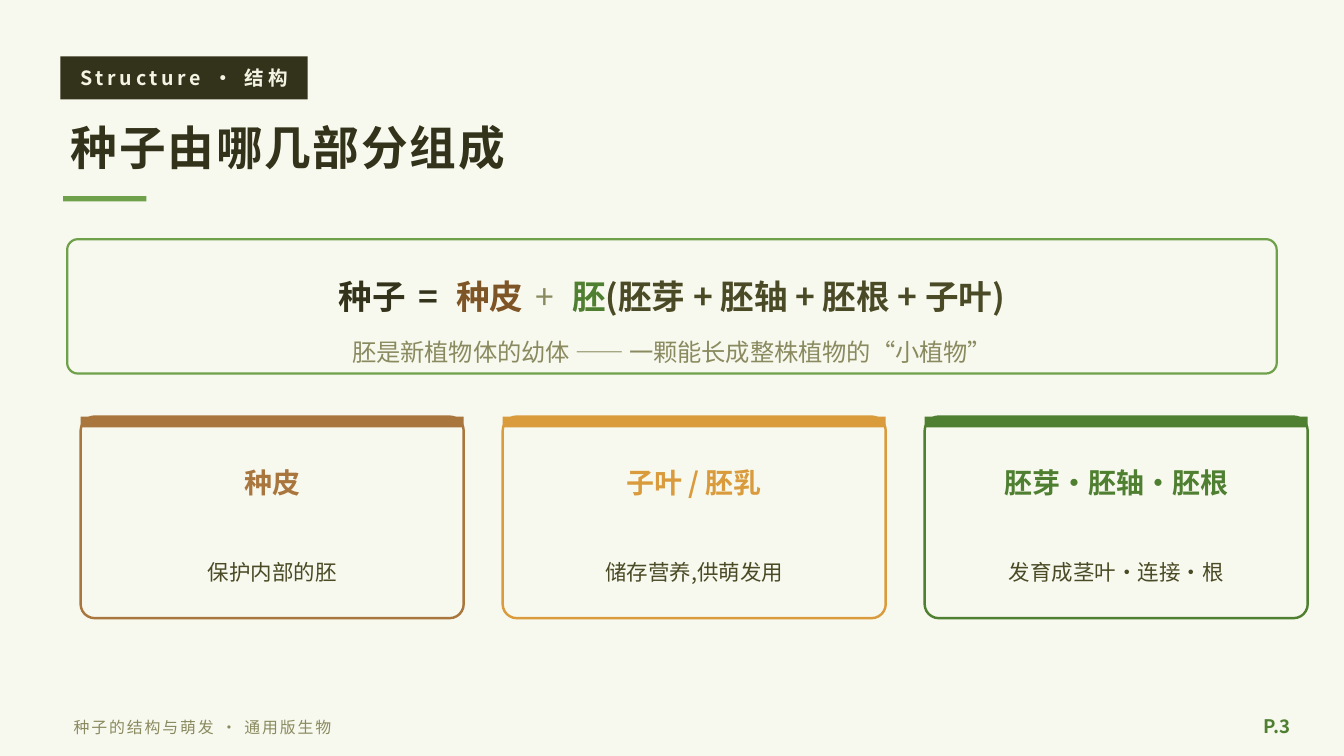
"""Build the slide on the parts that make up a seed."""
from dataclasses import dataclass

from pptx import Presentation
from pptx.dml.color import RGBColor
from pptx.enum.shapes import MSO_SHAPE
from pptx.enum.text import MSO_ANCHOR, PP_ALIGN
from pptx.oxml.ns import qn
from pptx.util import Inches, Pt


@dataclass(frozen=True)
class Theme:
    font: str = "Noto Sans CJK SC"
    paper: str = "F8F9EE"
    cream: str = "F3F4E4"
    ink: str = "33321A"
    body: str = "4A4A26"
    muted: str = "8A8A60"
    leaf: str = "6FA14A"
    forest: str = "4F7F30"
    bark: str = "7E5526"
    coat: str = "A9763E"
    grain: str = "D99B3C"
    title_size: float = 25
    formula_size: float = 18
    heading_size: float = 15
    note_size: float = 13
    card_size: float = 11.5
    tag_size: float = 10.5
    page_size: float = 10
    footer_size: float = 8.5


theme = Theme()
deck = Presentation()
deck.slide_width = Inches(10)
deck.slide_height = Inches(10 * 9 / 16)
column = deck.slide_width / 100
row = deck.slide_height / 56.25
page = deck.slides.add_slide(deck.slide_layouts[6])
page.background.fill.solid()
page.background.fill.fore_color.rgb = RGBColor.from_string(theme.paper)


def add_block(left, top, width, height, fill, line=None, weight=0, corner=0):
    kind = MSO_SHAPE.ROUNDED_RECTANGLE if corner else MSO_SHAPE.RECTANGLE
    block = page.shapes.add_shape(
        kind, round(left * column), round(top * row), round(width * column), round(height * row))
    block.shadow.inherit = False
    block.fill.solid()
    block.fill.fore_color.rgb = RGBColor.from_string(fill)
    if corner:
        block.adjustments[0] = corner
    if line:
        block.line.color.rgb = RGBColor.from_string(line)
        block.line.width = Pt(weight)
    else:
        block.line.fill.background()


def add_text(left, top, width, height, spans, size, align=PP_ALIGN.CENTER, leading=None):
    box = page.shapes.add_textbox(
        round(left * column), round(top * row), round(width * column), round(height * row))
    box.text_frame.word_wrap = True
    box.text_frame.vertical_anchor = MSO_ANCHOR.MIDDLE
    para = box.text_frame.paragraphs[0]
    para.alignment = align
    if leading:
        para.line_spacing = Pt(leading)
    for text, color, bold, spacing in spans:
        span = para.add_run()
        span.text = text
        span.font.name = theme.font
        span.font.size = Pt(size)
        span.font.bold = bold
        span.font.color.rgb = RGBColor.from_string(color)
        properties = span.font._element
        properties.append(properties.makeelement(qn("a:ea"), {"typeface": theme.font}))
        if spacing:
            properties.set("spc", str(round(spacing * 100)))


add_block(4.5, 4.2, 18.4, 3.2, theme.ink)
add_text(4.5, 4.1, 18.4, 3.4, [("Structure · 结构", theme.cream, True, 2)], theme.tag_size)
add_text(4.3, 7.8, 90, 6.2, [("种子由哪几部分组成", theme.ink, True, 1)],
         theme.title_size, PP_ALIGN.LEFT)
add_block(4.7, 14.6, 6.2, 0.4, theme.leaf)

add_block(5, 17.8, 90, 10, theme.paper, theme.leaf, 1.2, 0.08)
formula = [
    ("种子", theme.ink, True, 0),
    (" = ", theme.ink, True, 2.7),
    ("种皮", theme.bark, True, 0),
    (" + ", theme.muted, False, 2.7),
    ("胚", theme.forest, True, 0),
    ("(胚芽 + 胚轴 + 胚根 + 子叶)", theme.body, True, 0),
]
add_text(5, 19.5, 90, 5, formula, theme.formula_size)
add_text(5, 24.4, 90, 3.5,
         [("胚是新植物体的幼体 —— 一颗能长成整株植物的“小植物”", theme.muted, False, 0)],
         theme.note_size)

cards = [
    ("种皮", "保护内部的胚", theme.coat),
    ("子叶 / 胚乳", "储存营养,供萌发用", theme.grain),
    ("胚芽·胚轴·胚根", "发育成茎叶·连接·根", theme.forest),
]
card_top, card_width, card_step = 31, 28.5, 31.4
for index, (heading, role, color) in enumerate(cards):
    left = 6 + index * card_step
    add_block(left, card_top, card_width, 15, theme.paper, color, 1.3, 0.07)
    add_block(left, card_top, card_width, 0.8, color)
    add_text(left, card_top + 2.4, card_width, 5, [(heading, color, True, 0)], theme.heading_size)
    add_text(left + 1.5, card_top + 8.5, card_width - 3, 6,
             [(role, theme.body, False, 0)], theme.card_size, leading=15)

add_text(4.5, 52.6, 65, 3, [("种子的结构与萌发 · 通用版生物", theme.muted, False, 1)],
         theme.footer_size, PP_ALIGN.LEFT)
add_text(91, 52.4, 6, 3.2, [("P.3", theme.forest, True, 0)], theme.page_size, PP_ALIGN.RIGHT)

deck.save("out.pptx")
